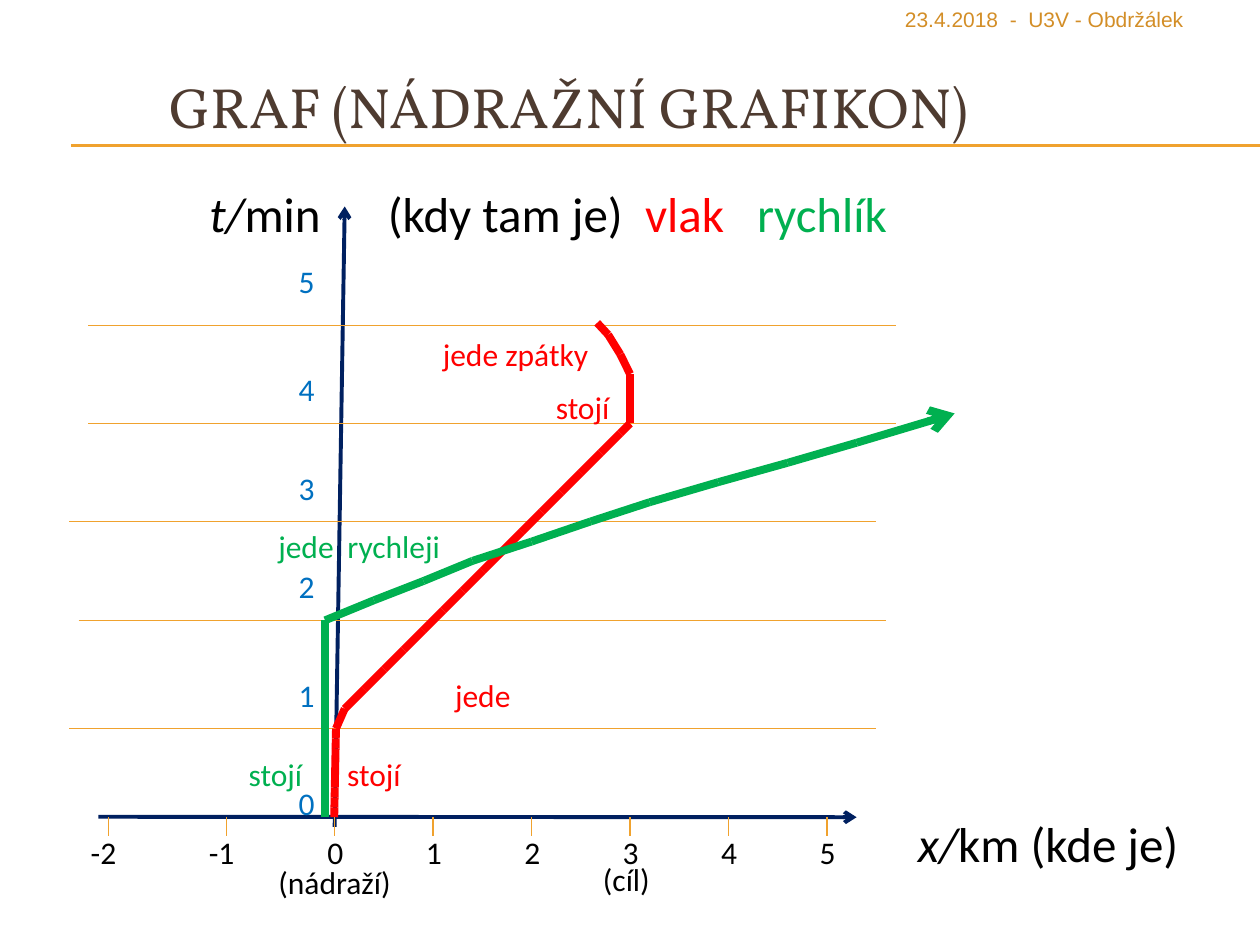
from itertools import pairwise

from lxml import etree
from pptx import Presentation
from pptx.dml.color import RGBColor
from pptx.enum import shapes, text
from pptx.oxml import ns
from pptx.util import Pt

COLORS = {"gold": "F0A22E", "date": "D38E27", "title": "4E3B30", "axis": "002060",
          "time": "0070C0", "train": "FF0000", "express": "00B050", "black": "000000"}

prs = Presentation()
prs.slide_width, prs.slide_height = Pt(720), Pt(540)
s = prs.slides.add_slide(prs.slide_layouts[0])


def add_line(x1, y1, x2, y2, color, width, arrow=False):
    line = s.shapes.add_connector(shapes.MSO_CONNECTOR.STRAIGHT, Pt(x1), Pt(y1), Pt(x2), Pt(y2))
    line.line.color.rgb = RGBColor.from_string(COLORS[color])
    line.line.width = Pt(width)
    if arrow:
        etree.SubElement(line.line._get_or_add_ln(), ns.qn("a:tailEnd"), type="arrow")
    etree.SubElement(line._element.spPr, ns.qn("a:effectLst"))


def add_text(x, y, w, h, runs, size=18, font="Calibri", tabs=()):
    """Add a one-line text box; runs are (text, color, italic), tabs are stops in points."""
    tf = s.shapes.add_textbox(Pt(x), Pt(y), Pt(w), Pt(h)).text_frame
    tf.word_wrap = True
    p = tf.paragraphs[0]
    for content, color, italic in runs:
        r = p.add_run()
        r.text = content
        formats = {"size": Pt(size), "name": font, "italic": italic}
        for name, value in formats.items():
            setattr(r.font, name, value)
        r.font.color.rgb = RGBColor.from_string(COLORS[color])
    if tabs:
        stops = etree.SubElement(p._p.get_or_add_pPr(), ns.qn("a:tabLst"))
        for stop in tabs:
            etree.SubElement(stops, ns.qn("a:tab"), pos=str(Pt(stop)), algn="l")


# Title, header rule and date
subtitle = s.placeholders[1]._element
subtitle.getparent().remove(subtitle)
title = s.shapes.title
for name, value in {"left": 89.5, "top": 37.5, "width": 612, "height": 39.5}.items():
    setattr(title, name, Pt(value))
tf = title.text_frame
tf.vertical_anchor = text.MSO_ANCHOR.TOP
tf.auto_size = text.MSO_AUTO_SIZE.NONE
p = tf.paragraphs[0]
p.alignment = text.PP_ALIGN.LEFT
r = p.add_run()
r.text = "GRAF (NÁDRAŽNÍ GRAFIKON)"
r.font.size, r.font.name = Pt(32.4), "Vollkorn"
r.font.color.rgb = RGBColor.from_string(COLORS["title"])
for y in (82.8, 83.5):
    add_line(40.5, y, 720, y, "gold", 0.75)
add_text(510, 0, 207, 23, [("23.4.2018\t-\tU3V - Obdržálek", "date", False)],
         size=12, font="Arial", tabs=(60, 70.5))

# Axes
add_line(56.25, 466.75, 489.5, 467, "axis", 2.25, arrow=True)
add_text(517.5, 461.5, 172, 41, [("x/", "black", True), ("km (kde je)", "black", False)], size=28)
add_line(191.25, 472.5, 197, 118, "axis", 2.25, arrow=True)
add_text(112.5, 101.5, 433, 41,
         [("t/", "black", True), ("min\t(kdy tam je)\t", "black", False),
          ("vlak\t", "train", False), ("rychlík", "express", False)],
         size=28, tabs=(102, 249, 313))

# Distance ticks
ticks = {-2: 62, -1: 129.5} | {km: 191.25 + 56.25 * km for km in range(6)}
for km, x in ticks.items():
    add_line(x, 467, x, 478, "gold", 0.79)
    offset, width = (17.25, 30) if km < 0 else (11.25, 24)
    add_text(x - offset, 472.5, width, 29, [(str(km), "black", False)])

# Time grid
for x, y in [(39.5, 416.25), (45, 354.5), (39.5, 298), (50.5, 242), (50.5, 185.75)]:
    add_line(x, y, x + 461.25, y, "gold", 0.5)
for minute, y in enumerate([444.5, 382.5, 320.5, 264.5, 208, 146.25]):
    add_text(163.5, y, 24, 29, [(str(minute), "time", False)])

# Train journeys: standing, then moving
train = [(191 + i / 9, 467 - 5.63 * i) for i in range(10)]
train += [(197 + 11.25 * i, 405 - 11.25 * i) for i in range(15)]
train += [(360, 242), (360, 225), (360, 213.75), (354.5, 202.5), (347.5, 191.25), (341.25, 184.5)]
express = [(185.75, 467 - 5.63 * i) for i in range(10)]
express += [(185.75, 405 - 11.25 * i) for i in range(5)]
express += [(185.75, 354.5), (213.75, 343), (242, 332), (270, 320.5), (303.75, 309.5), (337.5, 298),
            (371.25, 287), (410.5, 275.5), (450, 264.5), (489.5, 253), (545.5, 236.25)]
for color, points in {"train": train, "express": express}.items():
    for start, end in pairwise(points):
        add_line(*start, *end, color, 4.5, arrow=color == "express" and end == points[-1])

# Notes on the chart
for x, y, w, note, color in [
    (152, 489.5, 82, "(nádraží)", "black"),
    (337.5, 488, 45, "(cíl)", "black"),
    (191.25, 428, 48, "stojí", "train"),
    (253, 382.5, 50, "jede", "train"),
    (310.5, 218, 48, "stojí", "train"),
    (246, 188, 102, "jede zpátky", "train"),
    (135, 428, 48, "stojí", "express"),
    (152, 297.5, 116, "jede\trychleji", "express"),
]:
    add_text(x, y, w, 29, [(note, color, False)], tabs=(39.5,) if "\t" in note else ())

prs.save("out.pptx")
